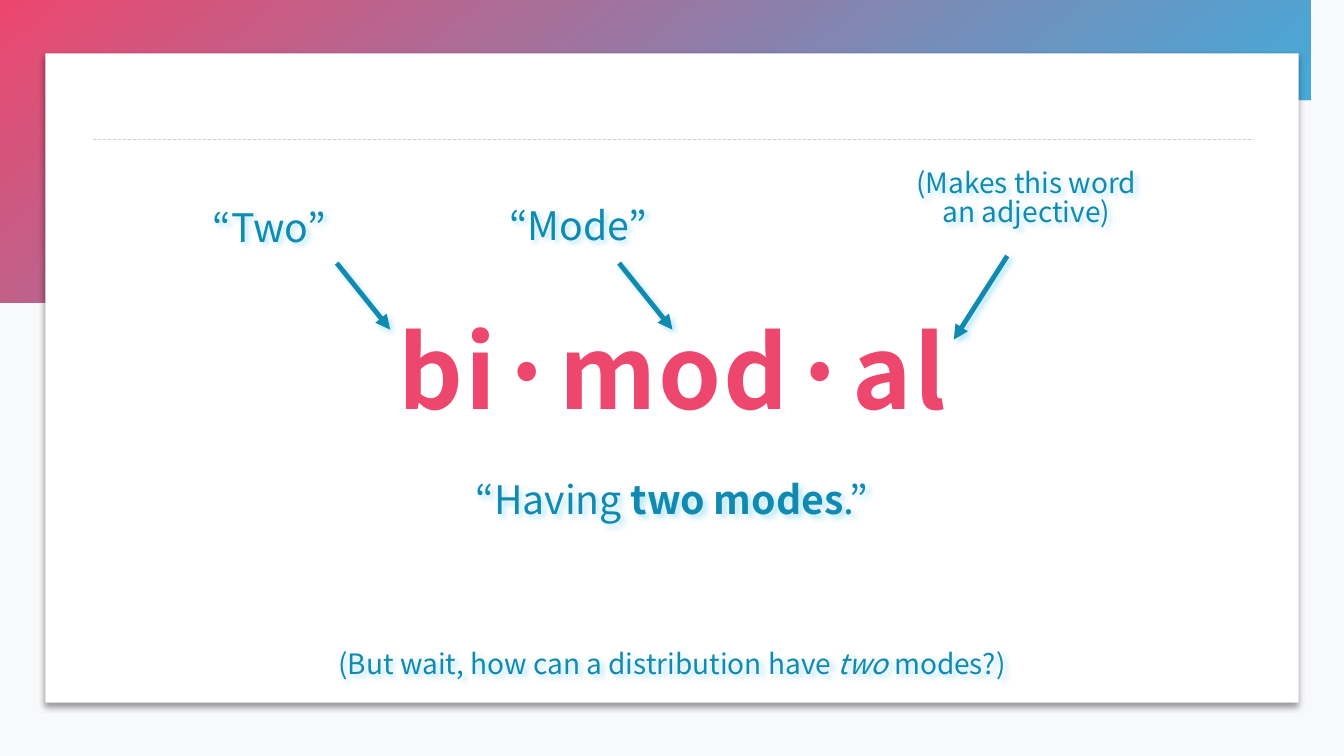
"""Build a slide that breaks the word bimodal into its parts."""
from dataclasses import dataclass

from lxml import etree
from pptx import Presentation, util as u
from pptx.dml.color import RGBColor
from pptx.enum import dml, shapes, text
from pptx.oxml.ns import qn

WIDTH, HEIGHT = 13.33, 7.5
CARD = (0.45, 0.53, 12.43, 6.44)
RULE = ((0.92, 1.38), (12.43, 1.38))
WORD_BOX = (0.92, 0.74, 11.5, 6.04)
WORD = [("bi·mod·al", "bold")]
WAVE_START = (0, 2.58)
WAVE_CURVES = [
    ((1.22, 3.04), (2.66, 3.11), (3.93, 2.74)),
    ((5.3, 2.35), (6.48, 1.51), (7.92, 1.36)),
    ((9.36, 1.21), (10.88, 1.8), (12.27, 1.42)),
    ((12.67, 1.31), (13.04, 1.11), (13.33, 0.85)),
]
CURVE_STEPS = 24
NOTES = [
    ((1.47, 2.04, 2.4, 0.57), "large", [("“Two”", "")]),
    ((4.8, 2.02, 1.87, 0.57), "large", [("“Mode”", "")]),
    ((8.89, 1.65, 2.58, 0.77), "small", [("(Makes this word an adjective)", "")]),
    ((2.86, 4.74, 7.61, 0.57), "large",
     [("“Having ", ""), ("two modes", "bold"), (".”", "")]),
    ((2.86, 6.42, 7.61, 0.44), "small",
     [("(But wait, how can a distribution have ", ""), ("two", "italic"), (" modes?)", "")]),
]
ARROWS = [
    ((3.34, 2.61), (3.87, 3.27)),
    ((6.14, 2.61), (6.67, 3.27)),
    ((9.99, 2.54), (9.46, 3.37)),
]


@dataclass(frozen=True)
class Theme:
    font: str = "Noto Sans CJK JP"
    background: str = "F8F9FB"
    card: str = "FFFFFF"
    rule: str = "D0CECE"
    pink: str = "EE476E"
    sky: str = "16B3E8"
    teal: str = "118AB1"
    glow: str = "52C8EE"
    black: str = "000000"
    word: int = 72
    large: int = 28
    small: int = 20
    spacing: float = 0.84


THEME = Theme()


def inches(values):
    return [u.Inches(value) for value in values]


def add_xml(parent, tag, **attributes):
    return etree.SubElement(parent, qn(tag), {k: str(v) for k, v in attributes.items()})


def add_color(parent, color, opacity):
    node = add_xml(parent, "a:srgbClr", val=color)
    add_xml(node, "a:alpha", val=opacity * 1000)


def add_shadow(shape, color, angle):
    effects = add_xml(shape.element.spPr, "a:effectLst")
    shadow = add_xml(effects, "a:outerShdw", blurRad=u.Pt(4), dist=u.Pt(3),
                     dir=angle * 60000, algn="tl", rotWithShape=0)
    add_color(shadow, color, 40)


def wave_points():
    start = WAVE_START
    for first, second, end in WAVE_CURVES:
        for step in range(1, CURVE_STEPS + 1):
            t = step / CURVE_STEPS
            s = 1 - t
            yield tuple(s**3 * a + 3 * s * s * t * b + 3 * s * t * t * c + t**3 * d
                        for a, b, c, d in zip(start, first, second, end))
        start = end


def add_wave(slide):
    builder = slide.shapes.build_freeform(0, 0, scale=u.Inches(1))
    builder.add_line_segments([WAVE_START, *wave_points(), (WIDTH, 0)], close=True)
    wave = builder.convert_to_shape()
    wave.shadow.inherit = False
    wave.line.fill.background()
    wave.fill.gradient()
    gradient = wave.element.spPr.find(qn("a:gradFill"))
    for child in list(gradient):
        gradient.remove(child)
    stops = add_xml(gradient, "a:gsLst")
    for position, color, opacity in ((0, THEME.pink, 100), (100, THEME.sky, 90)):
        add_color(add_xml(stops, "a:gs", pos=position * 1000), color, opacity)
    add_xml(gradient, "a:lin", ang=50 * 60000, scaled=0)


def add_card(slide):
    card = slide.shapes.add_shape(shapes.MSO_SHAPE.RECTANGLE, *inches(CARD))
    card.fill.solid()
    card.fill.fore_color.rgb = RGBColor.from_string(THEME.card)
    card.line.fill.background()
    add_shadow(card, THEME.black, 90)


def add_line(slide, ends, color, width):
    line = slide.shapes.add_connector(
        shapes.MSO_CONNECTOR.STRAIGHT, *inches(ends[0] + ends[1]))
    line.line.color.rgb = RGBColor.from_string(color)
    line.line.width = u.Pt(width)
    return line


def add_text(slide, box, size, color, runs):
    shape = slide.shapes.add_textbox(*inches(box))
    shape.text_frame.word_wrap = True
    paragraph = shape.text_frame.paragraphs[0]
    paragraph.alignment = text.PP_ALIGN.CENTER
    paragraph.line_spacing = THEME.spacing
    paragraph.font.name = THEME.font
    paragraph.font.size = u.Pt(size)
    paragraph.font.color.rgb = RGBColor.from_string(color)
    for words, style in runs:
        run = paragraph.add_run()
        run.text = words
        if style:
            setattr(run.font, style, True)
    return shape


def main():
    presentation = Presentation()
    presentation.slide_width, presentation.slide_height = inches((WIDTH, HEIGHT))
    slide = presentation.slides.add_slide(presentation.slide_layouts[6])
    slide.background.fill.solid()
    slide.background.fill.fore_color.rgb = RGBColor.from_string(THEME.background)

    add_wave(slide)
    add_card(slide)
    rule = add_line(slide, RULE, THEME.rule, 0.5)
    rule.line.dash_style = dml.MSO_LINE.DASH
    add_xml(rule.element.spPr, "a:effectLst")

    word = add_text(slide, WORD_BOX, THEME.word, THEME.pink, WORD)
    word.text_frame.vertical_anchor = text.MSO_ANCHOR.MIDDLE
    for run in word.text_frame.paragraphs[0].runs:
        run.font._element.set("spc", "150")

    for box, size, runs in NOTES:
        note = add_text(slide, box, getattr(THEME, size), THEME.teal, runs)
        note.text_frame.auto_size = text.MSO_AUTO_SIZE.SHAPE_TO_FIT_TEXT
        add_shadow(note, THEME.glow, 45)

    for ends in ARROWS:
        arrow = add_line(slide, ends, THEME.teal, 3.5)
        add_xml(arrow.line._get_or_add_ln(), "a:tailEnd", type="triangle")
        add_shadow(arrow, THEME.glow, 45)

    presentation.save("out.pptx")


if __name__ == "__main__":
    main()
